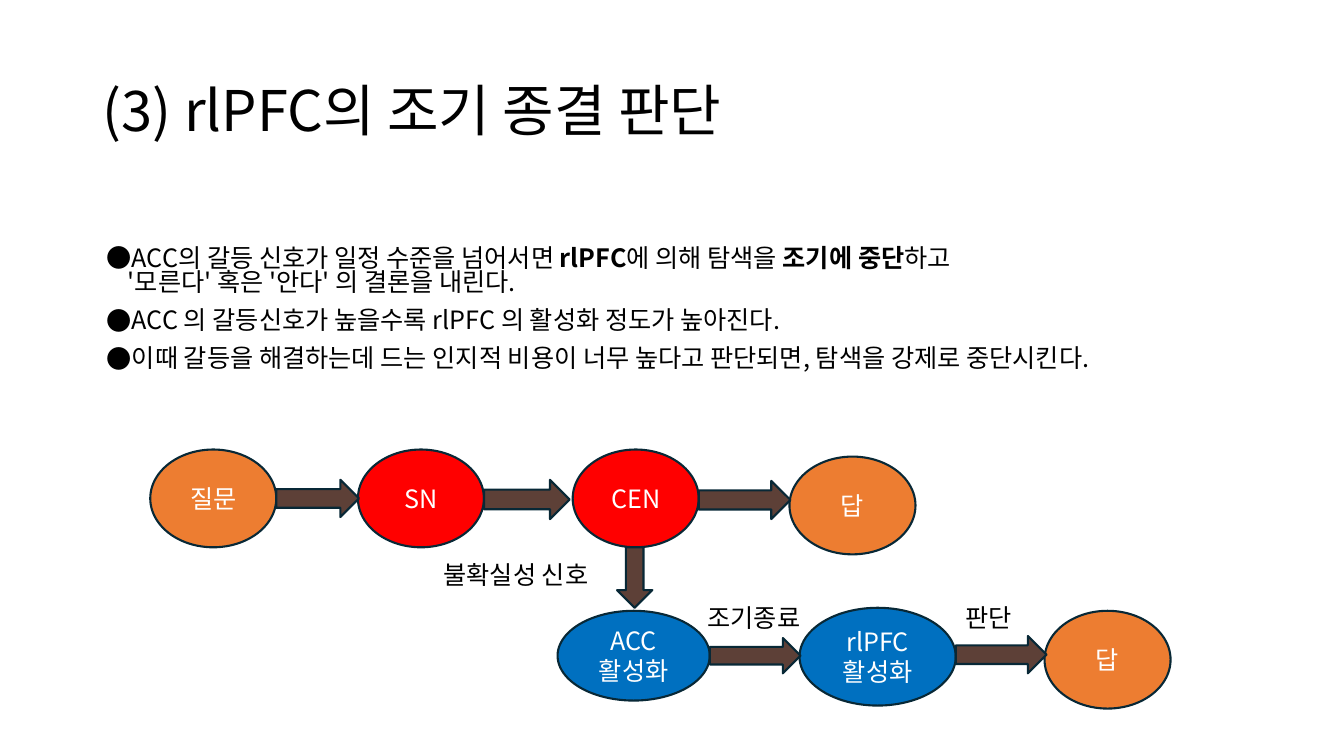
import pptx
import pptx.util
import pptx.dml.color
import pptx.enum.shapes
import pptx.enum.text
import pptx.oxml.ns
from lxml import etree

RGB = pptx.dml.color.RGBColor
BLACK = RGB(0x00, 0x00, 0x00)
WHITE = RGB(0xFF, 0xFF, 0xFF)
ORANGE = RGB(0xED, 0x7D, 0x31)
RED = RGB(0xFF, 0x00, 0x00)
BLUE = RGB(0x00, 0x70, 0xC0)
BROWN = RGB(0x5D, 0x40, 0x37)
NAVY = RGB(0x08, 0x28, 0x36)

Pt = pptx.util.Pt
KIND = pptx.enum.shapes.MSO_SHAPE
ALIGN = pptx.enum.text.PP_ALIGN
ANCHOR = pptx.enum.text.MSO_ANCHOR
FIT = pptx.enum.text.MSO_AUTO_SIZE
FACE = "Noto Sans CJK KR"
SCALE = 9144  # EMU per px, 100 px to the inch

# "**" switches bold on and off
POINTS = [
    "ACC의 갈등 신호가 일정 수준을 넘어서면 **rlPFC**에 의해 탐색을 **조기에 중단**하고 \n"
    "'모른다' 혹은 '안다' 의 결론을 내린다.",
    "ACC 의 갈등신호가 높을수록 rlPFC 의 활성화 정도가 높아진다.",
    "이때 갈등을 해결하는데 드는 인지적 비용이 너무 높다고 판단되면, 탐색을 강제로 중단시킨다.",
]
NODES = [
    ("질문", ORANGE, (149, 446, 125, 97)),
    ("SN", RED, (355, 446, 125, 97)),
    ("CEN", RED, (568, 446, 125, 97)),
    ("답", ORANGE, (783, 453, 125, 97)),
    ("ACC\n활성화", BLUE, (553, 606, 151, 89)),
    ("rlPFC\n활성화", BLUE, (793, 603, 155, 97)),
    ("답", ORANGE, (1036, 606, 125, 97)),
]
ARROWS = [
    (KIND.RIGHT_ARROW, (274, 476, 82, 37)),
    (KIND.RIGHT_ARROW, (480, 476, 85, 39)),
    (KIND.RIGHT_ARROW, (693, 477, 91, 38)),
    (KIND.RIGHT_ARROW, (704, 633, 90, 35)),
    (KIND.RIGHT_ARROW, (948, 631, 90, 37)),
    (KIND.DOWN_ARROW, (612, 543, 35, 60)),
]
LABELS = [
    ("불확실성 신호", (430, 550, 247, 40)),
    ("조기종료", (692, 593, 247, 40)),
    ("판단", (948, 593, 247, 40)),
]


def px(*sizes):
    return [size * SCALE for size in sizes]


def apply(item, form):
    for name, value in form.items():
        setattr(item, name, value)


def add_tag(node, tag, **values):
    return etree.SubElement(node, pptx.oxml.ns.qn(tag), values)


def add_run(para, text, size=18, color=BLACK, bold=False):
    run = para.add_run()
    run.text = text
    apply(run.font, {"name": FACE, "size": Pt(size), "bold": bold})
    run.font.color.rgb = color
    add_tag(run.font._element, "a:ea", typeface=FACE)


def write(frame, text, form, size=18, color=BLACK):
    """Put each line of text in its own paragraph."""
    for i, line in enumerate(text.split("\n")):
        para = frame.add_paragraph() if i else frame.paragraphs[0]
        apply(para, form)
        add_run(para, line, size, color)


def add_title(slide, text):
    title = slide.shapes.title
    box = dict(zip(("left", "top", "width", "height"), px(92, 40, 1150, 145)))
    apply(title, box)
    apply(title.text_frame, {"word_wrap": True, "auto_size": FIT.NONE,
                             "vertical_anchor": ANCHOR.MIDDLE})
    write(title.text_frame, text, {"alignment": ALIGN.LEFT, "line_spacing": 0.9}, 40)


def add_box(slide, box):
    frame = slide.shapes.add_textbox(*px(*box)).text_frame
    frame.word_wrap = True
    return frame


def add_bullet(para):
    props = para._p.get_or_add_pPr()
    left, hang = px(25, -21)
    props.set("marL", str(left))
    props.set("indent", str(hang))
    tint = add_tag(props, "a:buClr")
    add_tag(tint, "a:srgbClr", val=str(BLACK))
    add_tag(props, "a:buFont", typeface=FACE)
    add_tag(props, "a:buChar", char="●")


def add_points(slide, points, box):
    frame = add_box(slide, box)
    for i, point in enumerate(points):
        para = frame.add_paragraph() if i else frame.paragraphs[0]
        apply(para, {"line_spacing": 0.8, "space_before": Pt(10 if i else 0)})
        add_bullet(para)
        for j, part in enumerate(point.split("**")):
            for k, line in enumerate(part.split("\n")):
                if k:
                    para.add_line_break()
                add_run(para, line, bold=j % 2 == 1)


def add_form(slide, kind, fill, box):
    shape = slide.shapes.add_shape(kind, *px(*box))
    shape.shadow.inherit = False
    shape.fill.solid()
    shape.fill.fore_color.rgb = fill
    shape.line.color.rgb = NAVY
    shape.line.width = Pt(1.5)
    return shape


def add_node(slide, text, fill, box):
    frame = add_form(slide, KIND.OVAL, fill, box).text_frame
    apply(frame, {"word_wrap": True, "vertical_anchor": ANCHOR.MIDDLE})
    write(frame, text, {"alignment": ALIGN.CENTER}, color=WHITE)


def add_label(slide, text, box):
    frame = add_box(slide, box)
    frame.auto_size = FIT.SHAPE_TO_FIT_TEXT
    write(frame, text, {"alignment": ALIGN.LEFT})


def main():
    deck = pptx.Presentation()
    deck.slide_width, deck.slide_height = px(1333, 750)
    slide = deck.slides.add_slide(deck.slide_layouts[5])
    add_title(slide, "(3) rlPFC의 조기 종결 판단")
    add_points(slide, POINTS, (92, 241, 1150, 193))
    for text, fill, box in NODES:
        add_node(slide, text, fill, box)
    for kind, box in ARROWS:
        add_form(slide, kind, BROWN, box)
    for text, box in LABELS:
        add_label(slide, text, box)
    deck.save("out.pptx")


if __name__ == "__main__":
    main()
